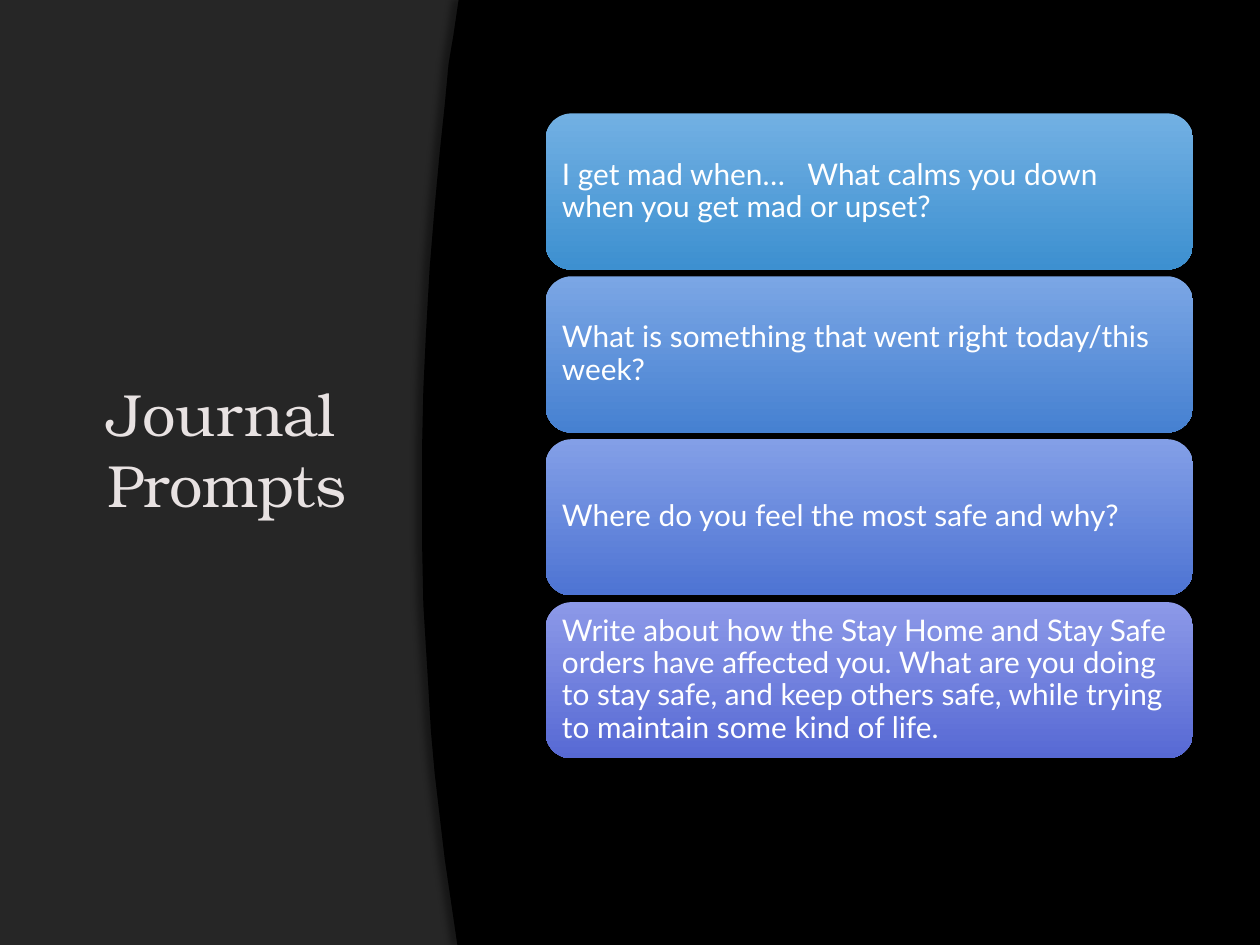
from lxml import etree
from pptx import Presentation
from pptx.dml.color import RGBColor
from pptx.enum import shapes, text
from pptx.oxml import ns
from pptx.util import Inches, Pt

COLORS = {
    "background": "000000",
    "panel": "262626",
    "title": "E8E2E2",
    "prompt": "FFFFFF",
    "shadow": "000000",
}
PROMPTS = [
    ("I get mad when…   What calms you down when you get mad or upset?",
     "72B0E3", "3D90D0"),
    ("What is something that went right today/this week?", "7BA6E5", "4681D1"),
    ("Where do you feel the most safe and why?", "839FE7", "4E74D3"),
    ("Write about how the Stay Home and Stay Safe orders have affected you. "
     "What are you doing to stay safe, and keep others safe, while trying to "
     "maintain some kind of life.", "8C99E8", "5769D4"),
]
# Left edge of the dark area, from bottom to top
CURVE = [
    (3.63, 7.5), (3.58, 7.16), (3.53, 6.82), (3.49, 6.48), (3.45, 6.14),
    (3.42, 5.8), (3.4, 5.46), (3.38, 5.13), (3.36, 4.8), (3.35, 4.32),
    (3.35, 3.54), (3.36, 3.09), (3.38, 2.66), (3.41, 2.13), (3.45, 1.64),
    (3.49, 1.21), (3.53, 0.83), (3.56, 0.51), (3.6, 0.27), (3.64, 0),
]


def rgb(name):
    return RGBColor.from_string(COLORS[name])


def add_shadow(properties, alpha, blur, distance, angle):
    """Append an outer shadow to shape or run properties."""
    effects = etree.SubElement(properties, ns.qn("a:effectLst"))
    shadow = etree.SubElement(
        effects, ns.qn("a:outerShdw"), blurRad=str(Pt(blur)),
        dist=str(Pt(distance)), dir=str(angle * 60000), rotWithShape="0")
    color = etree.SubElement(shadow, ns.qn("a:srgbClr"), val=COLORS["shadow"])
    etree.SubElement(color, ns.qn("a:alpha"), val=str(alpha * 1000))


presentation = Presentation()
presentation.slide_width = Inches(10)
presentation.slide_height = Inches(7.5)
slide = presentation.slides.add_slide(presentation.slide_layouts[5])
slide.background.fill.solid()
slide.background.fill.fore_color.rgb = rgb("background")

panel = slide.shapes.add_shape(
    shapes.MSO_SHAPE.RECTANGLE, 0, 0, Inches(10), Inches(7.5))
panel.shadow.inherit = False
panel.fill.solid()
panel.fill.fore_color.rgb = rgb("panel")
panel.line.fill.background()

# Title, brought in front of the panel
title = slide.shapes.title
panel._element.addnext(title._element)
title.left, title.top = Inches(0.75), Inches(0.67)
title.width, title.height = Inches(2.3), Inches(5.77)
title.text = "Journal Prompts"
title.text_frame.auto_size = text.MSO_AUTO_SIZE.NONE
title.text_frame.vertical_anchor = text.MSO_ANCHOR.MIDDLE
paragraph = title.text_frame.paragraphs[0]
paragraph.alignment = text.PP_ALIGN.LEFT
paragraph.font.name = "TeX Gyre Bonum"
paragraph.font.size = Pt(34)
paragraph.font.color.rgb = rgb("title")
add_shadow(paragraph.runs[0]._r.get_or_add_rPr(), 60, 4, 2, 45)

# Dark area with a curved left edge
builder = slide.shapes.build_freeform(Inches(10), 0)
builder.add_line_segments(
    [(Inches(x), Inches(y)) for x, y in [(10, 7.5)] + CURVE], close=True)
dark_area = builder.convert_to_shape()
dark_area.fill.solid()
dark_area.fill.fore_color.rgb = rgb("background")
dark_area.line.fill.background()
add_shadow(dark_area._element.spPr, 40, 4, 3, 180)

# Prompt cards
for index, (prompt, top_color, bottom_color) in enumerate(PROMPTS):
    card = slide.shapes.add_shape(
        shapes.MSO_SHAPE.ROUNDED_RECTANGLE, Inches(4.33),
        Inches(0.9 + index * 1.293), Inches(5.14), Inches(1.24))
    card.fill.gradient()
    card.fill.gradient_angle = 270
    for stop, position, color in zip(
            card.fill.gradient_stops, (0, 1), (top_color, bottom_color)):
        stop.position = position
        stop.color.rgb = RGBColor.from_string(color)
    card.line.fill.background()
    add_shadow(card._element.spPr, 60, 5, 2, 90)

    frame = card.text_frame
    frame.word_wrap = True
    frame.vertical_anchor = text.MSO_ANCHOR.MIDDLE
    frame.margin_left = frame.margin_right = Inches(0.07)
    frame.margin_top = frame.margin_bottom = Inches(0.07)
    frame.text = prompt
    paragraph = frame.paragraphs[0]
    paragraph.alignment = text.PP_ALIGN.LEFT
    paragraph.line_spacing = 0.9
    paragraph.font.name = "Lato"
    paragraph.font.size = Pt(17)
    paragraph.font.color.rgb = rgb("prompt")

presentation.save("out.pptx")
